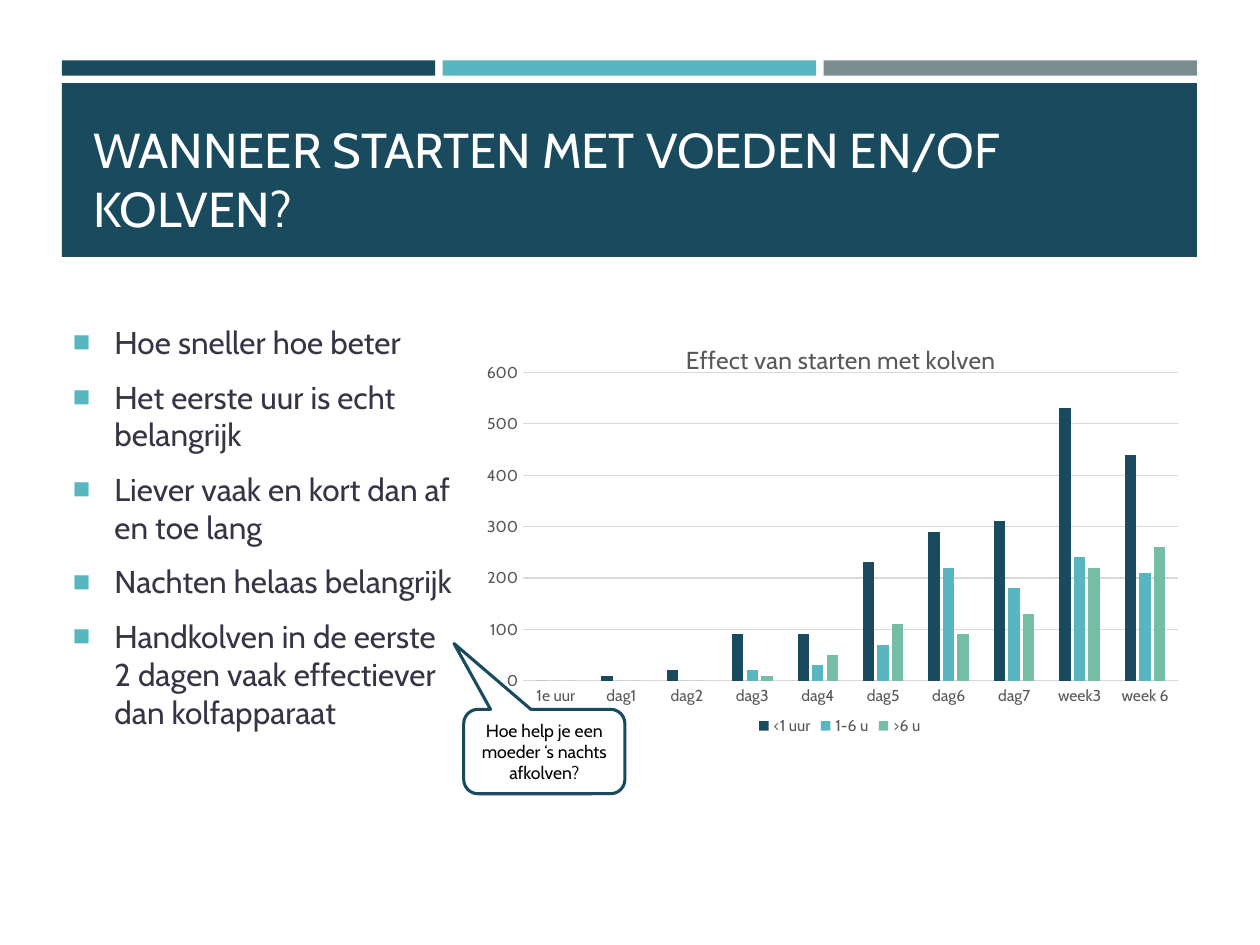
from collections import namedtuple
from dataclasses import dataclass

from lxml import etree
from pptx import Presentation
from pptx.chart.data import CategoryChartData
from pptx.dml.color import RGBColor
from pptx.enum.chart import XL_CHART_TYPE, XL_LEGEND_POSITION, XL_TICK_MARK
from pptx.enum.shapes import MSO_SHAPE
from pptx.enum.text import MSO_ANCHOR, PP_ALIGN
from pptx.oxml.ns import qn
from pptx.util import Inches, Pt

RECTANGLE = MSO_SHAPE.RECTANGLE
CALLOUT = MSO_SHAPE.ROUNDED_RECTANGULAR_CALLOUT
COLUMNS = XL_CHART_TYPE.COLUMN_CLUSTERED
LEGEND_BOTTOM = XL_LEGEND_POSITION.BOTTOM
NO_TICK = XL_TICK_MARK.NONE
MIDDLE, BOTTOM = MSO_ANCHOR.MIDDLE, MSO_ANCHOR.BOTTOM
LEFT, CENTER = PP_ALIGN.LEFT, PP_ALIGN.CENTER

Box = namedtuple("Box", "left top width height")


@dataclass(frozen=True)
class Theme:
    font: str = "Cabin"
    navy: str = "194A5D"
    teal: str = "58B6C0"
    gray: str = "7A8C8E"
    green: str = "75BDA7"
    white: str = "FFFFFF"
    black: str = "000000"
    body: str = "373545"
    chart_text: str = "595959"
    grid: str = "D9D9D9"
    title_size: float = 28
    body_size: float = 18
    chart_title_size: float = 14
    callout_size: float = 10.1
    label_size: float = 9


THEME = Theme()
BULLETS = [
    "Hoe sneller hoe beter",
    "Het eerste uur is echt belangrijk",
    "Liever vaak en kort dan af en toe lang",
    "Nachten helaas belangrijk",
    "Handkolven in de eerste 2 dagen vaak effectiever dan kolfapparaat",
]
CATEGORIES = ["1e uur", "dag1", "dag2", "dag3", "dag4",
              "dag5", "dag6", "dag7", "week3", "week 6"]
SERIES = [
    ("<1 uur", THEME.navy, [0, 10, 20, 90, 90, 230, 290, 310, 530, 440]),
    ("1-6 u", THEME.teal, [0, 0, 0, 20, 30, 70, 220, 180, 240, 210]),
    (">6 u", THEME.green, [0, 0, 0, 10, 50, 110, 90, 130, 220, 260]),
]


def emu(box):
    return [Inches(length) for length in box]


def color(value):
    return RGBColor.from_string(value)


def style_font(font, size, value):
    font.name, font.size, font.bold = THEME.font, Pt(size), False
    font.color.rgb = color(value)


def add_panel(slide, preset, box, fill):
    shape = slide.shapes.add_shape(preset, *emu(box))
    shape.shadow.inherit = False
    shape.fill.solid()
    shape.fill.fore_color.rgb = color(fill)
    shape.line.fill.background()
    return shape


def write_text(shape, text, size, value, anchor, align):
    frame = shape.text_frame
    frame.word_wrap = True
    frame.vertical_anchor = anchor
    frame.text = text
    for paragraph in frame.paragraphs:
        paragraph.alignment = align
        style_font(paragraph.runs[0].font, size, value)


def add_header(slide, box):
    # Three stripes over the title band
    gap, stripe_height = 0.06, 0.12
    stripe_width = (box.width - 2 * gap) / 3
    for index, fill in enumerate((THEME.navy, THEME.teal, THEME.gray)):
        left = box.left + index * (stripe_width + gap)
        add_panel(slide, RECTANGLE,
                  Box(left, box.top, stripe_width, stripe_height), fill)
    offset = stripe_height + gap
    band = Box(box.left, box.top + offset, box.width, box.height - offset)
    add_panel(slide, RECTANGLE, band, THEME.navy)
    # Title
    title = Box(band.left + 0.15, band.top + 0.09, band.width - 0.27, band.height - 0.2)
    write_text(slide.shapes.add_textbox(*emu(title)),
               "WANNEER STARTEN MET VOEDEN EN/OF KOLVEN?",
               THEME.title_size, THEME.white, BOTTOM, LEFT)


def add_bullet(paragraph):
    properties = paragraph._p.get_or_add_pPr()
    properties.set("marL", str(Inches(0.33)))
    properties.set("indent", str(-Inches(0.33)))
    bullet_color = etree.SubElement(properties, qn("a:buClr"))
    etree.SubElement(bullet_color, qn("a:srgbClr"), val=THEME.teal)
    etree.SubElement(properties, qn("a:buSzPct"), val="92000")
    etree.SubElement(properties, qn("a:buFont"), typeface="Arial")
    etree.SubElement(properties, qn("a:buChar"), char="■")


def add_bullet_list(slide, box):
    shape = slide.shapes.add_textbox(*emu(box))
    write_text(shape, "\n".join(BULLETS), THEME.body_size, THEME.body, MIDDLE, LEFT)
    for index, paragraph in enumerate(shape.text_frame.paragraphs):
        add_bullet(paragraph)
        paragraph.space_before = Pt(3.6 if index else 0)
        paragraph.space_after = Pt(6)


def add_callout(slide, box):
    shape = add_panel(slide, CALLOUT, box, THEME.white)
    shape.line.color.rgb = color(THEME.navy)
    shape.line.width = Pt(1.75)
    for index, value in enumerate((-0.56, -1.28, 0.17)):
        shape.adjustments[index] = value
    frame = shape.text_frame
    frame.margin_left = frame.margin_right = Inches(0.07)
    write_text(shape, "Hoe help je een moeder ‘s nachts afkolven?",
               THEME.callout_size, THEME.black, MIDDLE, CENTER)


def set_layout(element, position, **settings):
    layout = element.find(qn("c:layout"))
    if layout is None:
        layout = etree.Element(qn("c:layout"))
        element.insert(position, layout)
    manual = etree.SubElement(layout, qn("c:manualLayout"))
    for name, value in settings.items():
        etree.SubElement(manual, qn(f"c:{name}"), val=str(value))


def add_effect_chart(slide, box):
    data = CategoryChartData()
    data.categories = CATEGORIES
    for name, _, values in SERIES:
        data.add_series(name, values)
    chart = slide.shapes.add_chart(COLUMNS, *emu(box), data).chart
    style_font(chart.font, THEME.label_size, THEME.chart_text)
    # Title and plot area
    chart.has_title = True
    frame = chart.chart_title.text_frame
    frame.text = "Effect van starten met kolven"
    style_font(frame.paragraphs[0].runs[0].font, THEME.chart_title_size, THEME.chart_text)
    set_layout(chart.chart_title._element, 1, xMode="edge", yMode="edge", x=0.28, y=0.06)
    set_layout(chart._chartSpace.chart.plotArea, 0, layoutTarget="inner",
               xMode="edge", yMode="edge", x=0.06, y=0.14, w=0.91, h=0.72)
    # Columns
    plot = chart.plots[0]
    plot.gap_width, plot.overlap, plot.vary_by_categories = 219, -27, False
    for series, (_, fill, _) in zip(plot.series, SERIES):
        series.format.fill.solid()
        series.format.fill.fore_color.rgb = color(fill)
    # Axes and gridlines
    value_axis, category_axis = chart.value_axis, chart.category_axis
    for axis in (value_axis, category_axis):
        axis.major_tick_mark = axis.minor_tick_mark = NO_TICK
        style_font(axis.tick_labels.font, THEME.label_size, THEME.chart_text)
    value_axis.minimum_scale, value_axis.maximum_scale = 0, 600
    value_axis.major_unit = 100
    value_axis.format.line.fill.background()
    for line in (value_axis.major_gridlines.format.line, category_axis.format.line):
        line.color.rgb = color(THEME.grid)
        line.width = Pt(0.75)
    # Legend
    chart.has_legend = True
    chart.legend.position = LEGEND_BOTTOM
    chart.legend.include_in_layout = False
    style_font(chart.legend.font, THEME.label_size, THEME.chart_text)


def main():
    presentation = Presentation()
    presentation.slide_width, presentation.slide_height = Inches(10), Inches(7.5)
    slide = presentation.slides.add_slide(presentation.slide_layouts[6])
    add_header(slide, Box(0.49, 0.48, 9.01, 1.56))
    add_callout(slide, Box(3.68, 5.63, 1.28, 0.67))
    add_bullet_list(slide, Box(0.48, 2.36, 3.21, 3.64))
    add_effect_chart(slide, Box(3.81, 2.48, 5.71, 3.4))
    presentation.save("out.pptx")


if __name__ == "__main__":
    main()
